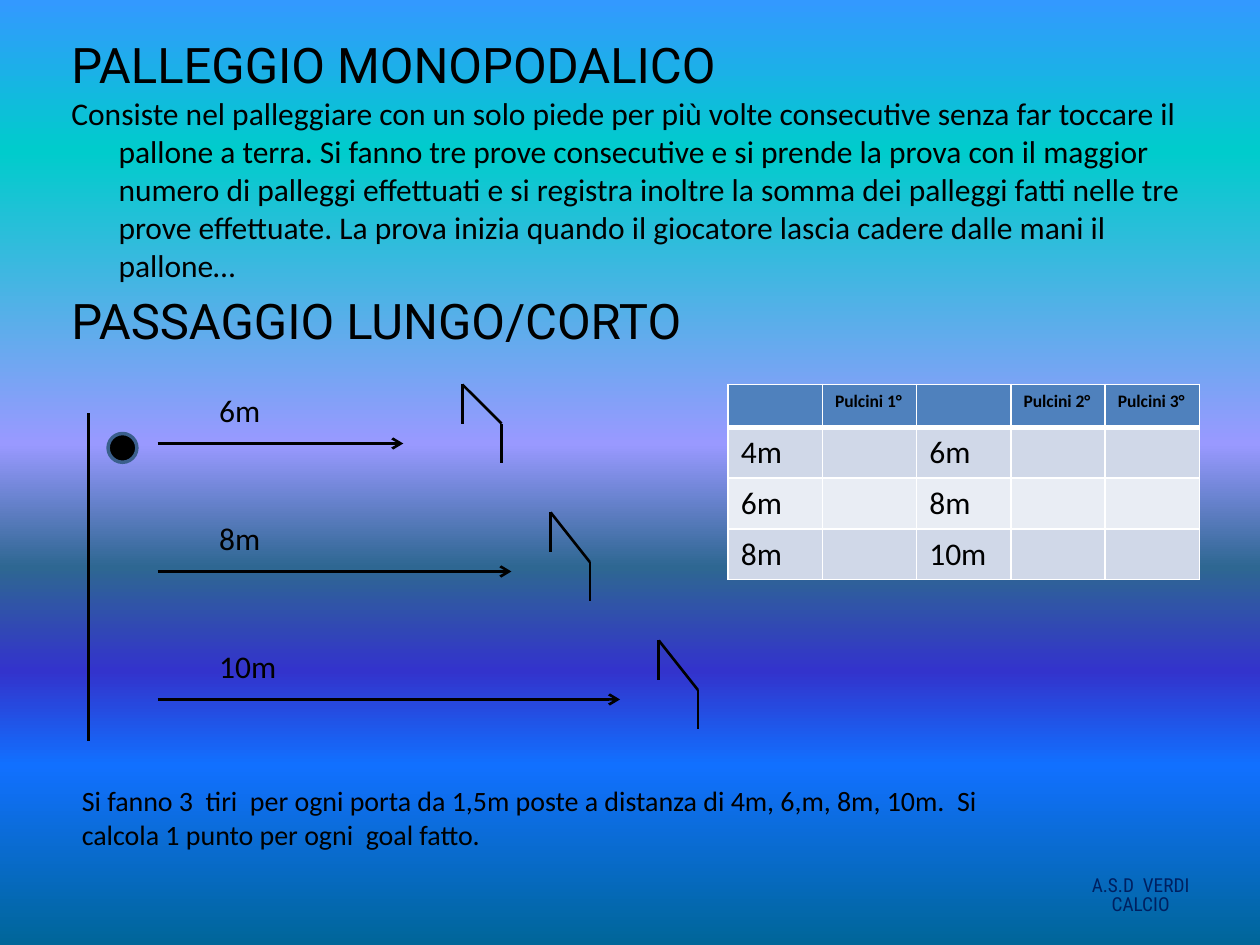
from lxml import etree
from pptx import Presentation
from pptx.dml.color import RGBColor
from pptx.enum import shapes, text
from pptx.oxml.ns import qn
from pptx.util import Cm, Pt

BLACK = RGBColor(0x00, 0x00, 0x00)
NAVY = RGBColor(0x00, 0x20, 0x60)
BALL_EDGE = RGBColor(0x3A, 0x5F, 0x8C)
HEADER_BLUE = RGBColor(0x4F, 0x81, 0xBD)
BAND_DARK = RGBColor(0xD0, 0xD8, 0xE8)
BAND_LIGHT = RGBColor(0xE9, 0xED, 0xF4)
WHITE = RGBColor(0xFF, 0xFF, 0xFF)
SKY = [
    (0, RGBColor(0x33, 0x99, 0xFF)),
    (16, RGBColor(0x00, 0xCC, 0xCC)),
    (47, RGBColor(0x99, 0x99, 0xFF)),
    (60, RGBColor(0x2E, 0x67, 0x92)),
    (71, RGBColor(0x33, 0x33, 0xCC)),
    (81, RGBColor(0x11, 0x70, 0xFF)),
    (100, RGBColor(0x00, 0x66, 0x99)),
]

RULES = (
    "Consiste nel palleggiare con un solo piede per più volte consecutive "
    "senza far toccare il pallone a terra. Si fanno tre prove consecutive e "
    "si prende la prova con il maggior numero di palleggi effettuati e si "
    "registra inoltre la somma dei palleggi fatti nelle tre prove effettuate. "
    "La prova inizia quando il giocatore lascia cadere dalle mani il pallone…"
)
SCORING = (
    "Si fanno 3  tiri  per ogni porta da 1,5m poste a distanza di 4m, 6,m, "
    "8m, 10m.  Si calcola 1 punto per ogni  goal fatto."
)
SCORES = [
    ["", "Pulcini 1°", "", "Pulcini 2°", "Pulcini 3°"],
    ["4m", "", "6m", "", ""],
    ["6m", "", "8m", "", ""],
    ["8m", "", "10m", "", ""],
]
# distance, arrow end, goal left, goal drop (cm)
LANES = [("6m", 8.13, 9.32, 0.79), ("8m", 10.31, 11.1, 1), ("10m", 12.5, 13.28, 1)]
LANE_TOP, LANE_PITCH = 7.75, 2.58
GOAL_WIDTH = POST = 0.79


def add_color(parent, color):
    etree.SubElement(parent, qn("a:srgbClr"), val=str(color))


def paint_background(slide):
    fill = slide.background.fill
    fill.gradient()
    fill.gradient_angle = 270
    stops = slide.element.find(".//" + qn("a:gsLst"))
    for stop in list(stops):
        stops.remove(stop)
    for percent, color in SKY:
        stop = etree.SubElement(stops, qn("a:gs"), pos=str(percent * 1000))
        add_color(stop, color)


def format_runs(p, size, font="Calibri", color=BLACK, bold=False):
    for r in p.runs:
        r.font.size = Pt(size)
        r.font.name = font
        r.font.bold = bold
        r.font.color.rgb = color


def add_text(slide, x, y, w, h, words, size, font="Calibri", color=BLACK,
             anchor=text.MSO_ANCHOR.TOP):
    """Add a wrapping text box and return its paragraph."""
    tf = slide.shapes.add_textbox(Cm(x), Cm(y), Cm(w), Cm(h)).text_frame
    tf.word_wrap = True
    tf.vertical_anchor = anchor
    p = tf.paragraphs[0]
    p.text = words
    format_runs(p, size, font, color)
    return p


def add_heading(slide, y, words):
    add_text(slide, 1.19, y, 22.86, 1, words, 28, "Roboto",
             anchor=text.MSO_ANCHOR.BOTTOM)


def add_line(slide, x1, y1, x2, y2, width=1.5, arrow=False):
    line = slide.shapes.add_connector(
        shapes.MSO_CONNECTOR.STRAIGHT, Cm(x1), Cm(y1), Cm(x2), Cm(y2))
    line.line.color.rgb = BLACK
    line.line.width = Pt(width)
    if arrow:
        etree.SubElement(line.line._get_or_add_ln(), qn("a:tailEnd"), type="arrow")
    etree.SubElement(line._element.spPr, qn("a:effectLst"))


def add_ball(slide):
    sp = slide.shapes.add_shape(
        shapes.MSO_SHAPE.FLOWCHART_CONNECTOR, Cm(2.18), Cm(8.74), Cm(0.58), Cm(0.58))
    sp.shadow.inherit = False
    sp.fill.solid()
    sp.fill.fore_color.rgb = BLACK
    sp.line.color.rgb = BALL_EDGE
    sp.line.width = Pt(2)


def add_goal(slide, x, y, drop):
    """Draw two posts joined by a slanting crossbar."""
    right = x + GOAL_WIDTH
    add_line(slide, x, y + POST, x, y)
    add_line(slide, x, y, right, y + drop)
    add_line(slide, right, y + drop, right, y + drop + POST)


def add_lane(slide, y, distance, arrow_end, goal_x, drop):
    add_text(slide, 4.17, y, 3.18, 1.02, distance, 18)
    add_line(slide, 3.18, y + 1.19, arrow_end, y + 1.19, arrow=True)
    add_goal(slide, goal_x, y, drop)


def set_borders(cell, top, bottom):
    """Give a cell white borders; they must come before its fill."""
    tcPr = cell._tc.get_or_add_tcPr()
    widths = [("a:lnL", 1), ("a:lnR", 1), ("a:lnT", top), ("a:lnB", bottom)]
    for tag, width in widths:
        ln = etree.SubElement(tcPr, qn(tag), w=str(Pt(width)))
        add_color(etree.SubElement(ln, qn("a:solidFill")), WHITE)


def add_score_table(slide):
    table = slide.shapes.add_table(
        len(SCORES), len(SCORES[0]), Cm(14.68), Cm(7.75), Cm(9.5), Cm(3.93)).table
    for column in table.columns:
        column.width = Cm(1.9)
    fills = [HEADER_BLUE, BAND_DARK, BAND_LIGHT, BAND_DARK]
    for i, (words, fill) in enumerate(zip(SCORES, fills)):
        header = i == 0
        table.rows[i].height = Cm(0.87 if header else 1.02)
        for cell, word in zip(table.rows[i].cells, words):
            set_borders(cell, 3 if i == 1 else 1, 3 if header else 1)
            cell.fill.solid()
            cell.fill.fore_color.rgb = fill
            p = cell.text_frame.paragraphs[0]
            p.text = word
            p.font.size = Pt(10 if header else 18)
            format_runs(p, 10 if header else 18, bold=header)


def main():
    prs = Presentation()
    prs.slide_width, prs.slide_height = Cm(25.4), Cm(19.05)
    slide = prs.slides.add_slide(prs.slide_layouts[6])
    paint_background(slide)

    add_heading(slide, 1, "PALLEGGIO MONOPODALICO")
    p = add_text(slide, 1.19, 1.78, 22.86, 4.37, RULES, 18)
    pPr = p._p.get_or_add_pPr()
    pPr.set("marL", str(Cm(0.95)))
    pPr.set("indent", str(-Cm(0.95)))
    add_heading(slide, 6.17, "PASSAGGIO LUNGO/CORTO")

    add_line(slide, 1.78, 8.33, 1.78, 14.94, width=2)
    add_ball(slide)
    for i, lane in enumerate(LANES):
        add_lane(slide, LANE_TOP + i * LANE_PITCH, *lane)
    add_score_table(slide)

    add_text(slide, 1.4, 15.67, 19.05, 1.63, SCORING, 16)
    p = add_text(slide, 21.23, 17.48, 3.53, 1.19, "A.S.D  VERDI CALCIO", 11,
                 "Roboto Condensed", NAVY, text.MSO_ANCHOR.MIDDLE)
    p.alignment = text.PP_ALIGN.CENTER
    p.line_spacing = 0.8
    prs.save("out.pptx")


if __name__ == "__main__":
    main()
